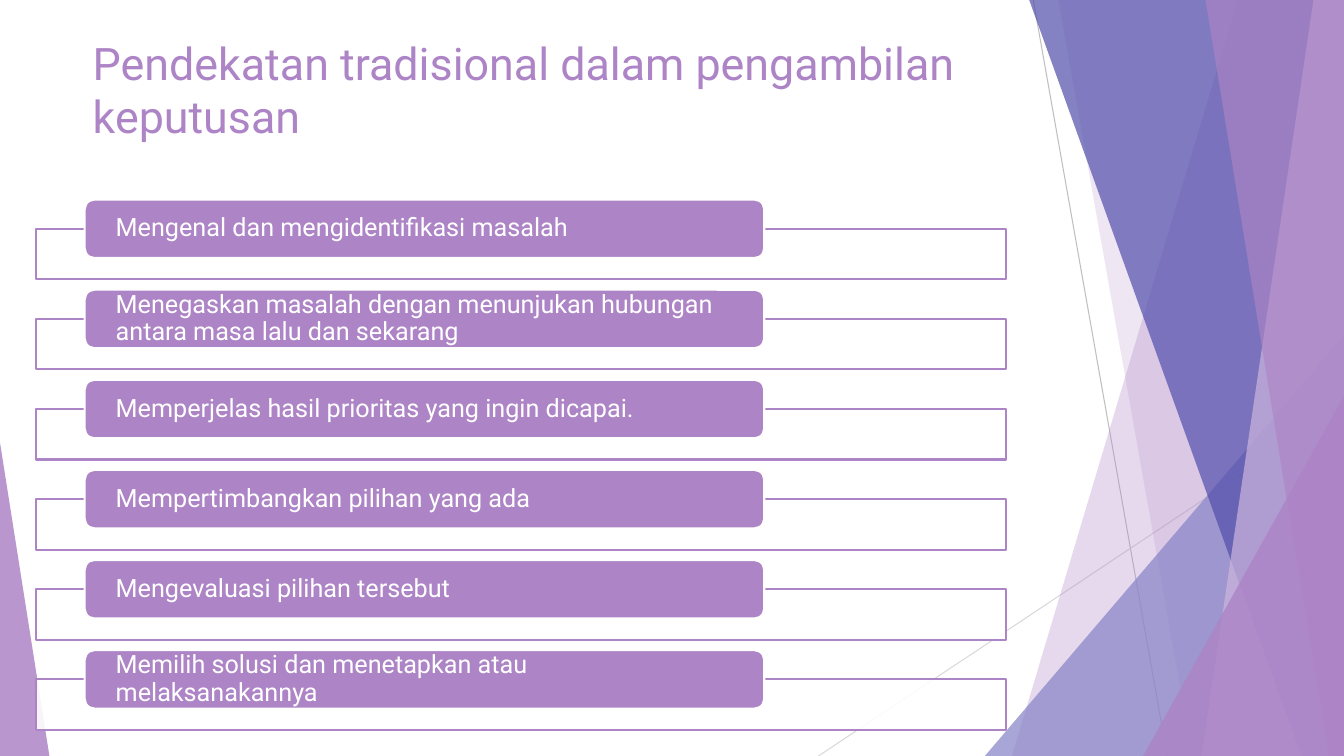
from dataclasses import dataclass

from lxml import etree
from pptx import Presentation, util as u
from pptx.dml.color import RGBColor
from pptx.enum import shapes, text
from pptx.oxml.ns import qn


@dataclass(frozen=True)
class Theme:
    font: str = "Roboto"
    head: int = 32
    body: int = 18
    edge: float = 1.5
    hair: float = 0.75
    white: str = "FFFFFF"
    mauve: str = "AD84C6"
    lilac: str = "CEB5DD"
    blue: str = "8784C7"
    navy: str = "524EAB"
    grey: str = "BFBFBF"
    pale: str = "D9D9D9"


@dataclass(frozen=True)
class Box:
    left: float
    top: float
    width: float
    height: float


@dataclass(frozen=True)
class Ray:
    start: tuple[float, float]
    end: tuple[float, float]
    color: str


@dataclass(frozen=True)
class Slant:
    top: float
    foot: float
    color: str
    alpha: int


@dataclass(frozen=True)
class Wedge:
    box: Box
    peak: float
    color: str
    alpha: int


THEME = Theme()
WIDE, HIGH = u.Inches(13.333), u.Inches(7.5)

RAYS = [
    Ray((76.88, 0), (86.85, 100), THEME.grey),
    Ray((100, 53.73), (60.9, 100), THEME.pale),
]
PANELS = [
    Slant(92.1, 75.3, THEME.mauve, 30),
    Slant(78.75, 88.73, THEME.mauve, 20),
    Wedge(Box(73.28, 44.4, 26.72, 55.6), 1, THEME.blue, 72),
    Slant(76.58, 96.83, THEME.navy, 70),
    Slant(97.73, 89.4, THEME.lilac, 70),
    Slant(89.7, 98.85, THEME.mauve, 65),
    Wedge(Box(85.05, 52.4, 14.95, 47.6), 1, THEME.mauve, 80),
    Wedge(Box(0, 58.53, 3.68, 41.47), 0, THEME.mauve, 85),
]
TITLE = Box(6.15, 4, 70.5, 19.2)
FIRST, PITCH, DROP = 26.4, 11.92, 3.87
STEPS = [
    "Mengenal dan mengidentifikasi masalah",
    "Menegaskan masalah dengan menunjukan hubungan antara masa lalu dan sekarang",
    "Memperjelas hasil prioritas yang ingin dicapai.",
    "Mempertimbangkan pilihan yang ada",
    "Mengevaluasi pilihan tersebut",
    "Memilih solusi dan menetapkan atau melaksanakannya",
]


def across(share: float) -> int:
    return round(WIDE * share / 100)


def down(share: float) -> int:
    return round(HIGH * share / 100)


def place(box: Box) -> tuple[int, int, int, int]:
    return across(box.left), down(box.top), across(box.width), down(box.height)


def paint(shape, color: str, alpha: int = 100, edge: str | None = None) -> None:
    shape.shadow.inherit = False
    shape.fill.solid()
    shape.fill.fore_color.rgb = RGBColor.from_string(color)
    if alpha < 100:
        tint = shape.element.spPr.find(qn("a:solidFill"))[0]
        etree.SubElement(tint, qn("a:alpha")).set("val", str(alpha * 1000))
    if edge is None:
        shape.line.fill.background()
    else:
        shape.line.color.rgb = RGBColor.from_string(edge)
        shape.line.width = u.Pt(THEME.edge)


def write(shape, words: str, *, size: int, color: str, anchor, side: float,
          rim: float = 0, lead: float = 1) -> None:
    frame = shape.text_frame
    frame.text = words
    frame.word_wrap = True
    frame.auto_size = text.MSO_AUTO_SIZE.NONE
    frame.vertical_anchor = anchor
    frame.margin_left = frame.margin_right = across(side)
    frame.margin_top = frame.margin_bottom = down(rim)
    line = frame.paragraphs[0]
    line.alignment = text.PP_ALIGN.LEFT
    line.line_spacing = lead
    font = line.runs[0].font
    font.name, font.size = THEME.font, u.Pt(size)
    font.color.rgb = RGBColor.from_string(color)


def draw_ray(slide, ray: Ray) -> None:
    (left, top), (right, foot) = ray.start, ray.end
    line = slide.shapes.add_connector(
        shapes.MSO_CONNECTOR.STRAIGHT, across(left), down(top), across(right), down(foot))
    line.line.color.rgb = RGBColor.from_string(ray.color)
    line.line.width = u.Pt(THEME.hair)
    etree.SubElement(line.element.spPr, qn("a:effectLst"))


def draw_slant(slide, slant: Slant) -> None:
    pen = slide.shapes.build_freeform(across(slant.top), 0)
    pen.add_line_segments([(WIDE, 0), (WIDE, HIGH), (across(slant.foot), HIGH)])
    paint(pen.convert_to_shape(), slant.color, slant.alpha)


def draw_wedge(slide, wedge: Wedge) -> None:
    shape = slide.shapes.add_shape(
        shapes.MSO_SHAPE.ISOSCELES_TRIANGLE, *place(wedge.box))
    shape.adjustments[0] = wedge.peak
    paint(shape, wedge.color, wedge.alpha)


def draw_step(slide, top: float, words: str) -> None:
    frame = slide.shapes.add_shape(
        shapes.MSO_SHAPE.RECTANGLE, *place(Box(2.7, top + DROP, 72.17, 6.67)))
    paint(frame, THEME.white, 90, THEME.mauve)
    bar = slide.shapes.add_shape(
        shapes.MSO_SHAPE.ROUNDED_RECTANGLE, *place(Box(6.3, top, 50.56, 7.73)))
    paint(bar, THEME.mauve, edge=THEME.white)
    write(bar, words, size=THEME.body, color=THEME.white,
          anchor=text.MSO_ANCHOR.MIDDLE, side=2.1, lead=0.9)


def main() -> None:
    deck = Presentation()
    deck.slide_width, deck.slide_height = WIDE, HIGH
    slide = deck.slides.add_slide(deck.slide_layouts.get_by_name("Title Only"))
    title = slide.shapes.title
    title.left, title.top, title.width, title.height = place(TITLE)
    write(title, "Pendekatan tradisional dalam pengambilan keputusan",
          size=THEME.head, color=THEME.mauve, anchor=text.MSO_ANCHOR.TOP,
          side=0.75, rim=0.67)
    for ray in RAYS:
        draw_ray(slide, ray)
    for panel in PANELS:
        if isinstance(panel, Slant):
            draw_slant(slide, panel)
        else:
            draw_wedge(slide, panel)
    for row, words in enumerate(STEPS):
        draw_step(slide, FIRST + row * PITCH, words)
    deck.save("out.pptx")


if __name__ == "__main__":
    main()
